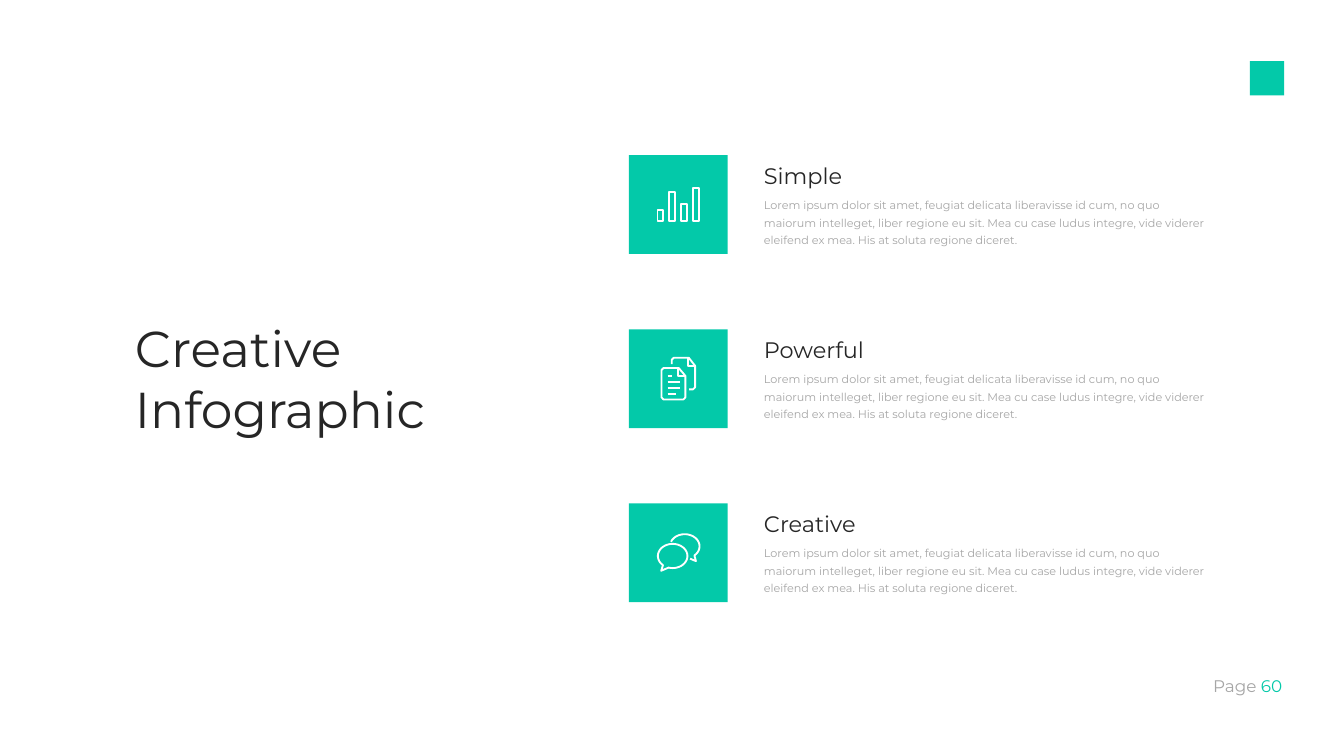
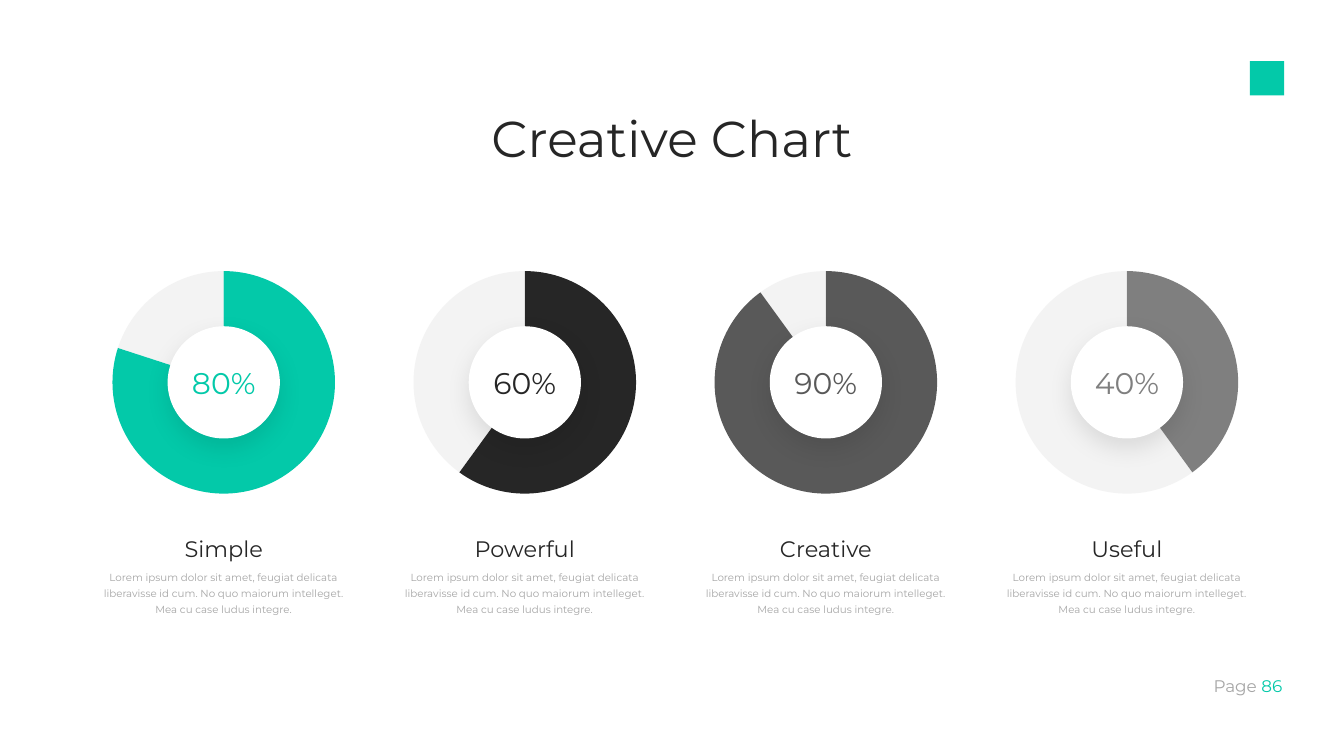
from dataclasses import dataclass
from math import cos, radians, sin
from typing import NamedTuple

from lxml.etree import SubElement
from pptx import Presentation
from pptx.chart.data import CategoryChartData
from pptx.dml.color import RGBColor
from pptx.enum.chart import XL_CHART_TYPE as ChartType
from pptx.enum.shapes import MSO_SHAPE as Preset
from pptx.enum.text import MSO_ANCHOR as Anchor, MSO_AUTO_SIZE as AutoSize, PP_ALIGN as Align
from pptx.oxml import parse_xml
from pptx.oxml.ns import nsdecls, qn
from pptx.util import Emu, Inches, Pt

SLIDE_WIDTH, SLIDE_HEIGHT = Inches(20), Inches(11.25)
CELL = SLIDE_WIDTH / 100


@dataclass(frozen=True)
class Theme:
    """Colours, font and type sizes of the deck."""

    font: str = "Montserrat"
    accent: str = "03C9A9"
    ink: str = "262626"
    charcoal: str = "595959"
    gray: str = "7F7F7F"
    muted: str = "A6A6A6"
    track: str = "D9D9D9"
    paper: str = "FFFFFF"
    title: int = 54
    percent: int = 32
    heading: int = 24
    page: int = 18
    body: int = 12
    caption: int = 11
    icon_line: float = 2


THEME = Theme()


@dataclass(frozen=True)
class Box:
    """A rectangle measured in square grid cells, 100 across the slide."""

    left: float
    top: float
    width: float
    height: float

    @classmethod
    def around(cls, x: float, y: float, width: float, height: float) -> "Box":
        """Return a box centred on a point."""
        return cls(x - width / 2, y - height / 2, width, height)

    def emu(self) -> tuple:
        """Return the box in slide units."""
        return tuple(cells(n) for n in (self.left, self.top, self.width, self.height))


class Stroke(NamedTuple):
    """One pen stroke of an icon, in cells from the corner of its tile."""

    points: list
    closed: bool = False


class Feature(NamedTuple):
    """A heading with an icon."""

    heading: str
    icon: list


class Gauge(NamedTuple):
    """A heading with a percentage ring."""

    heading: str
    percent: int
    color: str


def cells(count: float) -> Emu:
    """Convert grid cells to slide units."""
    return Emu(round(count * CELL))


def rgb(color: str) -> RGBColor:
    """Convert a hex string to a colour."""
    return RGBColor.from_string(color)


def arc(x: float, y: float, start: int, end: int) -> list:
    """Return the points of a speech bubble's curve, clockwise in degrees."""
    turns = [radians(start + (end - start) * step / 40) for step in range(41)]
    return [(x + 1.1 * cos(turn), y + 0.9 * sin(turn)) for turn in turns]


def bar(index: int, top: float) -> Stroke:
    """Return the outline of one bar of the bars icon."""
    left, width, base = 2.12 + 0.89 * index, 0.44, 4.92
    return Stroke([(left, top), (left + width, top), (left + width, base), (left, base)], True)


BARS = [bar(index, top) for index, top in enumerate((4.08, 2.72, 3.62, 2.42))]
PAGES = [
    Stroke([(2.57, 2.88), (3.7, 2.88), (4.2, 3.47), (4.2, 5.07), (4.05, 5.22),
            (2.57, 5.22), (2.42, 5.07), (2.42, 3.03)], True),
    Stroke([(3.62, 2.88), (3.62, 3.47), (4.2, 3.47)]),
    Stroke([(3.18, 2.6), (3.18, 2.27), (3.33, 2.12), (4.45, 2.12), (4.92, 2.72),
            (4.92, 4.32), (4.77, 4.47), (4.48, 4.47)]),
    Stroke([(4.37, 2.12), (4.37, 2.72), (4.92, 2.72)]),
] + [Stroke([(2.87, 3.47 + 0.44 * row), (end, 3.47 + 0.44 * row)])
     for row, end in enumerate((3.2, 3.8, 3.8, 3.5))]
BUBBLES = [
    Stroke(arc(3.25, 3.92, 131, 466) + [(2.4, 5.02)], True),
    Stroke(arc(4.15, 3.2, 202, 409) + [(4.98, 4.3), (4.55, 4.12)]),
]

FEATURES = [Feature("Simple", BARS), Feature("Powerful", PAGES), Feature("Creative", BUBBLES)]
FEATURE_BODY = (
    "Lorem ipsum dolor sit amet, feugiat delicata liberavisse id cum, no quo maiorum "
    "intelleget, liber regione eu sit. Mea cu case ludus integre, vide viderer eleifend "
    "ex mea. His at soluta regione diceret."
)
GAUGES = [
    Gauge("Simple", 80, THEME.accent),
    Gauge("Powerful", 60, THEME.ink),
    Gauge("Creative", 90, THEME.charcoal),
    Gauge("Useful", 40, THEME.gray),
]
GAUGE_BODY = (
    "Lorem ipsum dolor sit amet, feugiat delicata liberavisse id cum. "
    "No quo maiorum intelleget. Mea cu case ludus integre."
)


def add_frame(slide, box: Box, anchor=Anchor.TOP):
    """Add an empty wrapping text box and return its frame."""
    frame = slide.shapes.add_textbox(*box.emu()).text_frame
    frame.word_wrap = True
    frame.auto_size = AutoSize.SHAPE_TO_FIT_TEXT
    frame.vertical_anchor = anchor
    return frame


def write(frame, text: str, *, size: int, color: str = THEME.ink, align=Align.LEFT,
          before: int = 0, spacing: float = 1.0, same_line: bool = False) -> None:
    """Write text as a new paragraph, or on the last line."""
    line = frame.paragraphs[-1]
    if line.runs and not same_line:
        line = frame.add_paragraph()
    line.alignment, line.space_before, line.line_spacing = align, Pt(before), spacing
    run = line.add_run()
    run.text = text
    run.font.name, run.font.size = THEME.font, Pt(size)
    run.font.color.rgb = rgb(color)


def add_solid(slide, preset, box: Box, color: str):
    """Add a flat preset shape without an outline."""
    solid = slide.shapes.add_shape(preset, *box.emu())
    solid.shadow.inherit = False
    solid.fill.solid()
    solid.fill.fore_color.rgb = rgb(color)
    solid.line.fill.background()
    return solid


def add_icon(slide, tile: Box, strokes: list) -> None:
    """Draw the strokes of an icon as one outline on its tile."""
    paths = [[(cells(tile.left + x), cells(tile.top + y)) for x, y in stroke.points]
             for stroke in strokes]
    builder = slide.shapes.build_freeform(*paths[0][0])
    for path, stroke in zip(paths, strokes):
        builder.move_to(*path[0])
        builder.add_line_segments(path[1:], close=stroke.closed)
    icon = builder.convert_to_shape()
    icon.shadow.inherit = False
    icon.fill.background()
    icon.line.color.rgb = rgb(THEME.paper)
    icon.line.width = Pt(THEME.icon_line)


def add_page(deck, number: int):
    """Add a slide with the shared corner mark and page number."""
    slide = deck.slides.add_slide(deck.slide_layouts[6])
    footer = add_frame(slide, Box(87.1, 50.05, 8.8, 2))
    write(footer, "Page ", size=THEME.page, color=THEME.muted, align=Align.RIGHT)
    write(footer, str(number), size=THEME.page, color=THEME.accent,
          align=Align.RIGHT, same_line=True)
    add_solid(slide, Preset.RECTANGLE, Box(93, 4.55, 2.55, 2.55), THEME.accent)
    return slide


def add_title(slide, text: str, box: Box, align=Align.LEFT) -> None:
    """Add a slide title."""
    write(add_frame(slide, box), text, size=THEME.title, align=align, before=6)


def add_ring(slide, box: Box, gauge: Gauge) -> None:
    """Add a doughnut chart of one percentage and its remainder."""
    numbers = CategoryChartData()
    numbers.categories = ["1", "2"]
    numbers.add_series("Series 1", (gauge.percent, 100 - gauge.percent))
    chart = slide.shapes.add_chart(ChartType.DOUGHNUT, *box.emu(), numbers).chart
    chart.has_legend = chart.has_title = False
    chart.font.name, chart.font.size = "Calibri", Pt(18)
    chart.font.color.rgb = rgb("000000")
    plot = chart.plots[0]
    plot.vary_by_categories = True
    plot.has_data_labels = False
    for index, color in enumerate((gauge.color, THEME.track)):
        style = plot.series[0].points[index].format
        style.fill.solid()
        style.fill.fore_color.rgb = rgb(color)
        style.line.fill.background()
    track = plot.series[0].points[1].format.fill
    tint = track._xPr.find(".//" + qn("a:srgbClr"))
    SubElement(tint, qn("a:alpha"), val="30000")
    area = chart.element.chart.plotArea
    for layout in area.findall(qn("c:layout")):
        area.remove(layout)
    area.insert(0, parse_xml(
        f'<c:layout {nsdecls("c")}><c:manualLayout><c:layoutTarget val="inner"/>'
        '<c:xMode val="edge"/><c:yMode val="edge"/><c:x val="0.11"/><c:y val="0.04"/>'
        '<c:w val="0.78"/><c:h val="0.92"/></c:manualLayout></c:layout>'))


def add_hub(slide, box: Box) -> None:
    """Add the shadowed disc in the middle of a ring."""
    hub = add_solid(slide, Preset.OVAL, box, THEME.paper)
    effects = hub.element.spPr.find(qn("a:effectLst"))
    shadow = SubElement(effects, qn("a:outerShdw"), blurRad=str(Pt(26)), dist=str(Pt(10)),
                        dir="5400000", algn="t", rotWithShape="0")
    tint = SubElement(shadow, qn("a:srgbClr"), val="000000")
    SubElement(tint, qn("a:alpha"), val="10000")


def build_infographic(deck) -> None:
    """Build the slide with three icon rows."""
    slide = add_page(deck, 60)
    add_title(slide, "Creative Infographic", Box(9.55, 23.35, 26.55, 9.6))
    for row, feature in enumerate(FEATURES):
        tile = Box(46.8, 11.55 + 12.95 * row, 7.35, 7.35)
        add_solid(slide, Preset.RECTANGLE, tile, THEME.accent)
        add_icon(slide, tile, feature.icon)
        frame = add_frame(slide, Box(56.35, tile.top + 0.25, 33.85, 6.9))
        write(frame, feature.heading, size=THEME.heading, before=6)
        write(frame, FEATURE_BODY, size=THEME.body, color=THEME.muted, before=6, spacing=1.3)


def build_gauges(deck) -> None:
    """Build the slide with four percentage rings."""
    slide = add_page(deck, 86)
    add_title(slide, "Creative Chart", Box(26.25, 7.7, 47.5, 5.05), Align.CENTER)
    middle = 28.45
    for column, gauge in enumerate(GAUGES):
        center = 16.65 + 22.4 * column
        add_ring(slide, Box.around(center, middle, 21.3, 18), gauge)
        add_hub(slide, Box.around(center, middle, 8.35, 8.35))
        label = add_frame(slide, Box.around(center, middle, 9.55, 3.2), Anchor.MIDDLE)
        write(label, f"{gauge.percent}%", size=THEME.percent, color=gauge.color,
              align=Align.CENTER)
        frame = add_frame(slide, Box(center - 10.18, 39.15, 20.35, 6.95))
        write(frame, gauge.heading, size=THEME.heading, align=Align.CENTER,
              before=6, spacing=1.2)
        write(frame, GAUGE_BODY, size=THEME.caption, color=THEME.muted,
              align=Align.CENTER, before=6, spacing=1.3)


def main() -> None:
    """Build and save the deck."""
    deck = Presentation()
    deck.slide_width, deck.slide_height = SLIDE_WIDTH, SLIDE_HEIGHT
    build_infographic(deck)
    build_gauges(deck)
    deck.save("out.pptx")


if __name__ == "__main__":
    main()
